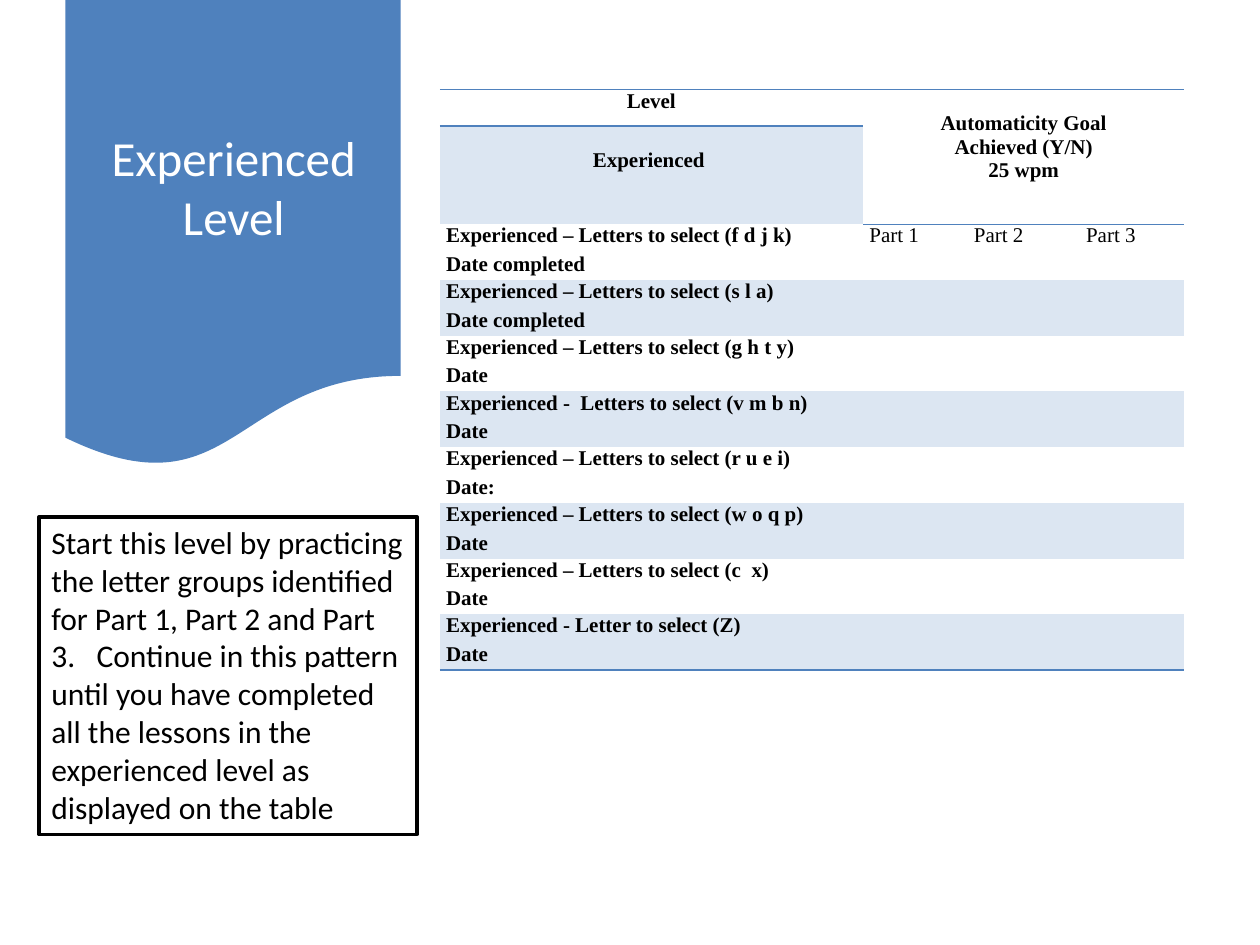
from lxml import etree
from pptx import Presentation
from pptx import util as u
from pptx.dml import color
from pptx.enum import shapes, text
from pptx.oxml import ns

BLUE, PALE, WHITE, BLACK = "4F81BD", "DCE6F2", "FFFFFF", "000000"
SERIF, SANS = "Times New Roman", "Calibri"
PLAIN = "{2D5ABB26-0587-4C30-8999-92F81FD0307C}"
WIDE, HIGH = 10, 7.5
COLS = [3.36, 0.83, 0.89, 0.83]
HEAD, SUB, STEP = 0.29, 0.74, 0.43
GOAL = ["Automaticity Goal", "Achieved (Y/N)", "25 wpm"]
PARTS = ["Part 1", "Part 2", "Part 3"]
TASKS = [
    ("Experienced – Letters to select (f d j k)", "Date completed"),
    ("Experienced – Letters to select (s l a)", "Date completed"),
    ("Experienced – Letters to select (g h t y)", "Date"),
    ("Experienced -  Letters to select (v m b n)", "Date"),
    ("Experienced – Letters to select (r u e i)", "Date:"),
    ("Experienced – Letters to select (w o q p)", "Date"),
    ("Experienced – Letters to select (c  x)", "Date"),
    ("Experienced - Letter to select (Z)", "Date"),
]
NOTE = ("Start this level by practicing the letter groups identified for "
        "Part 1, Part 2 and Part 3.   Continue in this pattern until you have "
        "completed all the lessons in the experienced level as displayed on "
        "the table")


def paint(target, tone):
    """Give a fill or a font a solid colour from a hex string."""
    if hasattr(target, "solid"):
        target.solid()
        target = target.fore_color
    else:
        target = target.color
    target.rgb = color.RGBColor.from_string(tone)


def place(left, top, width, height):
    """Turn shares of the slide into lengths."""
    return [u.Inches(share * side) for share, side in
            zip((left, top, width, height), (WIDE, HIGH, WIDE, HIGH))]


def write(frame, lines, size, face, tone=BLACK, bold=False,
          align=text.PP_ALIGN.LEFT, gap=0):
    """Write one paragraph for each line."""
    frame.word_wrap = True
    for i, line in enumerate(lines):
        para = frame.add_paragraph() if i else frame.paragraphs[0]
        para.text = line
        para.alignment = align
        para.space_before = u.Pt(gap)
        para.font.size, para.font.name = u.Pt(size), face
        para.font.bold = bold
        paint(para.font, tone)


def block(slide, kind, box, tone, edge=None):
    """Add a filled preset shape, with an edge if one is given."""
    shape = slide.shapes.add_shape(kind, *box)
    shape.shadow.inherit = False
    paint(shape.fill, tone)
    if edge:
        paint(shape.line.fill, edge)
        shape.line.width = u.Pt(2)
    else:
        shape.line.fill.background()
    return shape


def title(slide, box, words):
    """Add the centred slide heading."""
    frame = slide.shapes.add_textbox(*box).text_frame
    frame.vertical_anchor = text.MSO_ANCHOR.MIDDLE
    write(frame, [words], 28, SANS, WHITE, align=text.PP_ALIGN.CENTER)


def rule(cell, sides):
    """Draw blue lines on the named sides of a cell, last side first."""
    props = cell._tc.get_or_add_tcPr()
    for side in sides:
        line = etree.Element(ns.qn("a:ln" + side), w=str(u.Pt(1)))
        fill = etree.SubElement(line, ns.qn("a:solidFill"))
        etree.SubElement(fill, ns.qn("a:srgbClr"), val=BLUE)
        props.insert(0, line)


def build(slide, left, top):
    """Add a bare table with the column and row sizes set."""
    rows = [HEAD, SUB] + [STEP] * len(TASKS)
    box = [u.Inches(n) for n in (left, top, sum(COLS), sum(rows))]
    grid = slide.shapes.add_table(len(rows), len(COLS), *box).table
    grid._tbl.tblPr.find(ns.qn("a:tableStyleId")).text = PLAIN
    grid.first_row = grid.horz_banding = False
    for col, width in zip(grid.columns, COLS):
        col.width = u.Inches(width)
    for row, height in zip(grid.rows, rows):
        row.height = u.Inches(height)
    for cell in grid.iter_cells():
        cell.margin_left = cell.margin_right = u.Inches(0.05)
        cell.margin_top = cell.margin_bottom = 0
    return grid


def shade(grid):
    """Band the rows and draw the lines of the table."""
    last = len(grid.rows) - 1
    for r, row in enumerate(grid.rows):
        for c, cell in enumerate(row.cells):
            if r % 2 and (r > 1 or c == 0):
                paint(cell.fill, PALE)
            else:
                cell.fill.background()
            if r == 0:
                rule(cell, "BT")
            elif r == last or (r == 1 and c):
                rule(cell, "B")


def plan(slide):
    """Add the table of lessons."""
    grid = build(slide, 3.49, 0.71)
    shade(grid)
    goal = grid.cell(0, 1)
    goal.merge(grid.cell(1, 3))
    heads = [(grid.cell(0, 0), ["Level"]), (goal, GOAL),
             (grid.cell(1, 0), ["Experienced "])]
    for cell, lines in heads:
        write(cell.text_frame, lines, 12, SERIF, bold=True,
              align=text.PP_ALIGN.CENTER)
    for cell, _ in heads[1:]:
        cell.margin_top = u.Inches(0.18)
    for r, lines in enumerate(TASKS, 2):
        write(grid.cell(r, 0).text_frame, lines, 12, SERIF, bold=True, gap=3)
        for c in range(1, len(COLS)):
            words = PARTS[c - 1] if r == 2 else ""
            write(grid.cell(r, c).text_frame, [words], 12, SERIF, gap=3)


def main():
    """Build the slide and save it."""
    deck = Presentation()
    deck.slide_width, deck.slide_height = u.Inches(WIDE), u.Inches(HIGH)
    slide = deck.slides.add_slide(deck.slide_layouts[6])
    kinds = shapes.MSO_SHAPE
    block(slide, kinds.FLOWCHART_DOCUMENT, place(0.052, 0, 0.266, 0.496), BLUE)
    title(slide, place(0.069, 0.025, 0.233, 0.345), "Experienced Level")
    plan(slide)
    note = block(slide, kinds.RECTANGLE, place(0.031, 0.547, 0.3, 0.336),
                 WHITE, BLACK)
    note.text_frame.vertical_anchor = text.MSO_ANCHOR.TOP
    write(note.text_frame, [NOTE], 18, SANS)
    deck.save("out.pptx")


if __name__ == "__main__":
    main()
